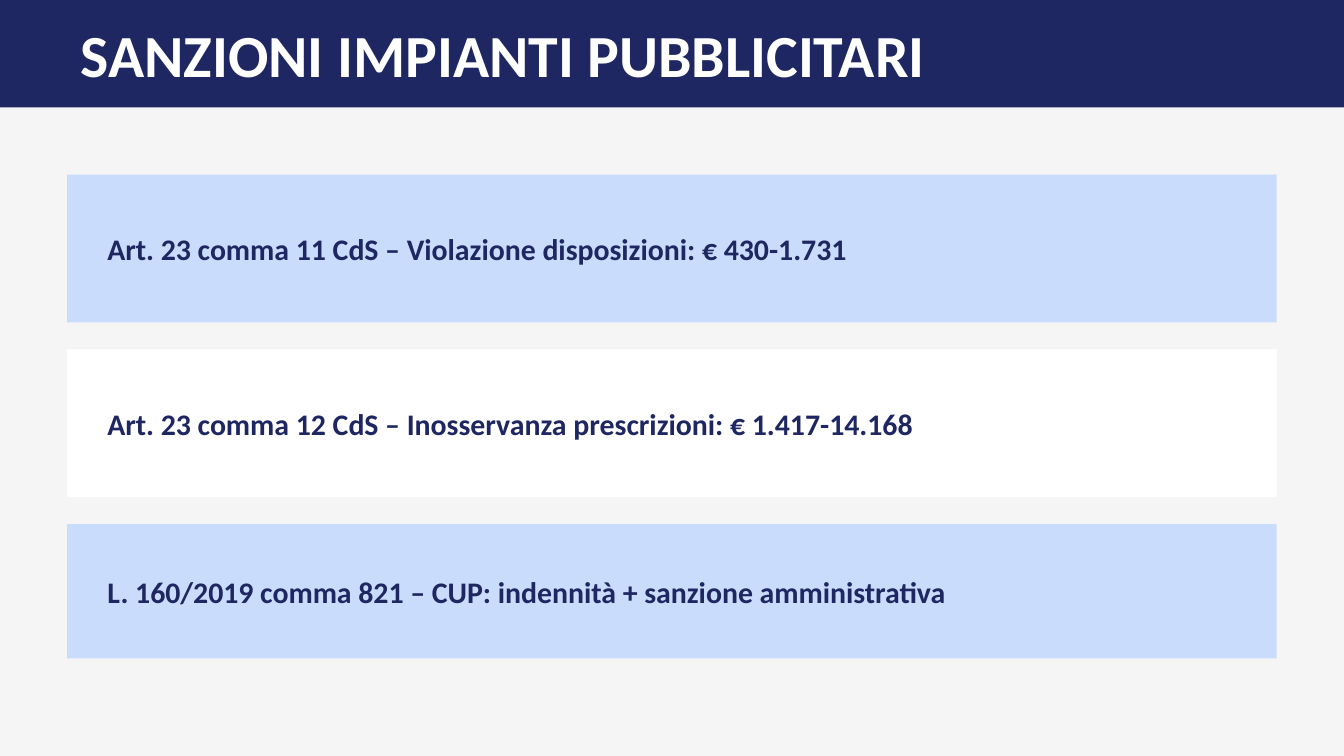
from pptx import Presentation
from pptx.dml.color import RGBColor
from pptx.enum.shapes import MSO_SHAPE
from pptx.enum.text import MSO_ANCHOR, PP_ALIGN
from pptx.util import Inches, Pt

NAVY = RGBColor(0x1E, 0x27, 0x61)
PALE_BLUE = RGBColor(0xCA, 0xDC, 0xFC)
WHITE = RGBColor(0xFF, 0xFF, 0xFF)
LIGHT_GREY = RGBColor(0xF5, 0xF5, 0xF5)

SANCTIONS = [
    ("Art. 23 comma 11 CdS – Violazione disposizioni: € 430-1.731", PALE_BLUE, Inches(1.1)),
    ("Art. 23 comma 12 CdS – Inosservanza prescrizioni: € 1.417-14.168", WHITE, Inches(1.1)),
    ("L. 160/2019 comma 821 – CUP: indennità + sanzione amministrativa", PALE_BLUE, Inches(1)),
]


def add_panel(slide, left, top, width, height, color):
    """Add a plain filled rectangle and return it."""
    panel = slide.shapes.add_shape(MSO_SHAPE.RECTANGLE, left, top, width, height)
    panel.shadow.inherit = False
    panel.fill.solid()
    panel.fill.fore_color.rgb = color
    panel.line.fill.background()
    return panel


def write_line(frame, text, size, color):
    """Write one bold, left-aligned, vertically centred line."""
    frame.word_wrap = True
    frame.vertical_anchor = MSO_ANCHOR.MIDDLE
    line = frame.paragraphs[0]
    line.text = text
    line.alignment = PP_ALIGN.LEFT
    line.font.name = "Calibri"
    line.font.size = Pt(size)
    line.font.bold = True
    line.font.color.rgb = color


def add_header(slide, left, top, width, height, text):
    """Place the title placeholder over a full-width band."""
    band = add_panel(slide, left, top, width, height, NAVY)
    title = slide.shapes.title
    band._element.addnext(title._element)
    title.left, title.top = left + Inches(0.5), top + Inches(0.15)
    title.width, title.height = width - Inches(1), height - Inches(0.3)
    write_line(title.text_frame, text, 32, WHITE)


def add_sanction(slide, left, top, width, height, text, color):
    """Add one sanction card with its text inset in the panel."""
    add_panel(slide, left, top, width, height, color)
    inset = Inches(0.2)
    label = slide.shapes.add_textbox(
        left + inset, top + inset, width - 2 * inset, height - 2 * inset
    )
    write_line(label.text_frame, text, 16, NAVY)


def add_sanctions(slide, left, top, width, gap):
    """Stack the sanction cards with equal gaps."""
    for text, color, height in SANCTIONS:
        add_sanction(slide, left, top, width, height, text, color)
        top += height + gap


def main():
    """Build and save the slide."""
    deck = Presentation()
    deck.slide_width = Inches(10)
    deck.slide_height = deck.slide_width * 9 // 16
    slide = deck.slides.add_slide(deck.slide_layouts[5])
    slide.background.fill.solid()
    slide.background.fill.fore_color.rgb = LIGHT_GREY
    add_header(slide, 0, 0, deck.slide_width, Inches(0.8), "SANZIONI IMPIANTI PUBBLICITARI")
    add_sanctions(slide, Inches(0.5), Inches(1.3), Inches(9), Inches(0.2))
    deck.save("out.pptx")


if __name__ == "__main__":
    main()
